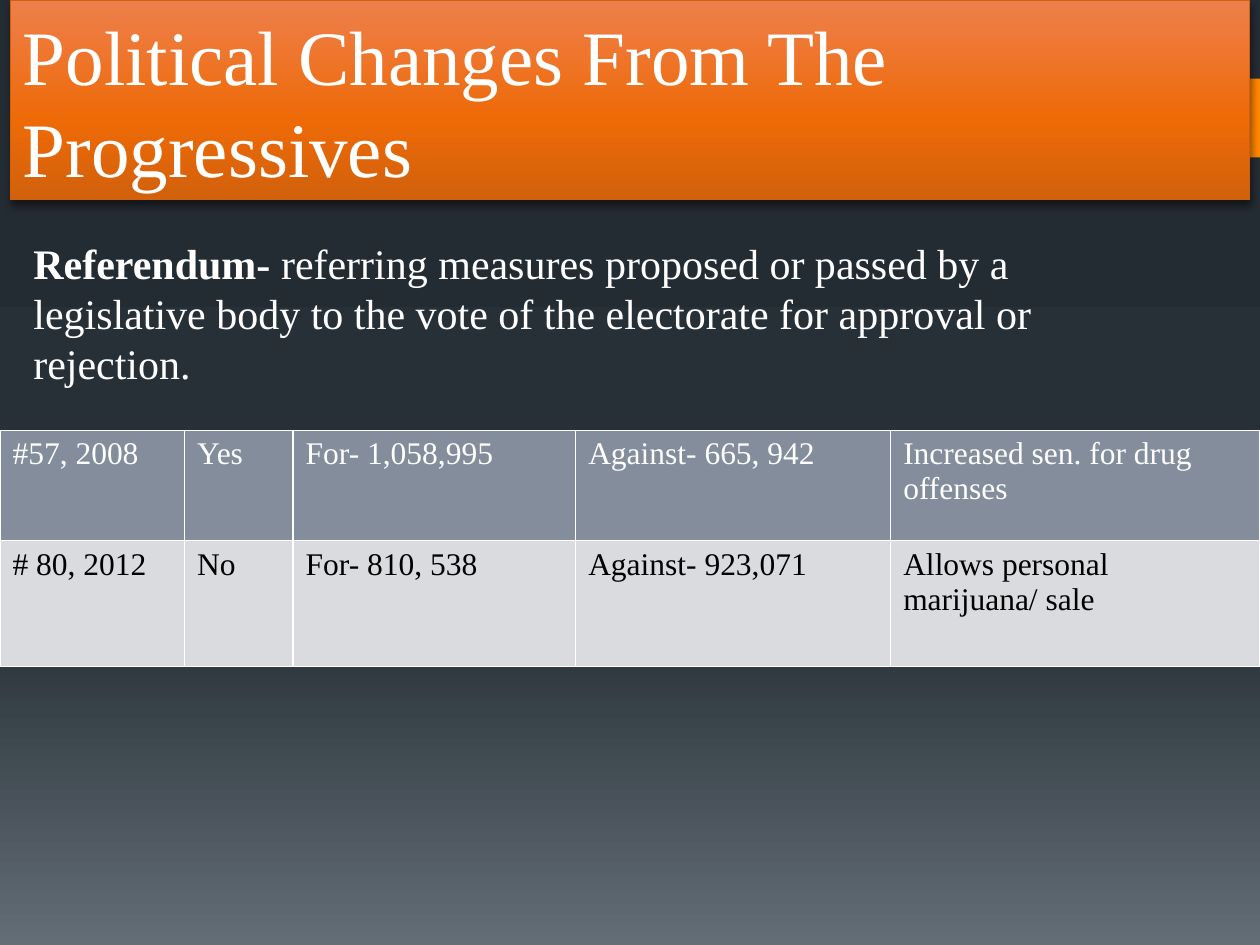
import copy
from dataclasses import dataclass

import pptx
import pptx.dml.color
import pptx.enum.shapes
import pptx.enum.text
import pptx.oxml
import pptx.oxml.ns
import pptx.util
from lxml import etree

Pt = pptx.util.Pt
RGBColor = pptx.dml.color.RGBColor
qn = pptx.oxml.ns.qn

WHITE = RGBColor(0xFF, 0xFF, 0xFF)
BLACK = RGBColor(0x00, 0x00, 0x00)
AMBER = RGBColor(0xFF, 0x86, 0x00)
RUST = RGBColor(0xD2, 0x61, 0x0C)
SLATE = RGBColor(0x83, 0x8D, 0x9B)
PALE_GREY = RGBColor(0xD9, 0xDB, 0xDE)
BACKGROUND_STOPS = (
    (0, RGBColor(0x24, 0x2C, 0x33)),
    (0.65, RGBColor(0x27, 0x30, 0x37)),
    (1, RGBColor(0x63, 0x6D, 0x76)),
)
TITLE_STOPS = (
    (0, RGBColor(0xEE, 0x7F, 0x4C)),
    (0.6, RGBColor(0xEE, 0x6A, 0x07)),
    (1, RUST),
)
FONT = "Times New Roman"


@dataclass(frozen=True)
class Frame:
    left: float
    top: float
    width: float
    height: float

    def lengths(self) -> tuple:
        return Pt(self.left), Pt(self.top), Pt(self.width), Pt(self.height)


@dataclass(frozen=True)
class VoteRow:
    cells: tuple
    height: float
    fill: RGBColor
    text: RGBColor


ACCENT_BARS = (Frame(664, 45, 6.5, 45), Frame(674.5, 45, 45.5, 45))
TITLE_FRAME = Frame(6, 0, 708, 114)
DEFINITION_FRAME = Frame(12, 132, 588, 94)
COLUMN_WIDTHS = (105.5, 62, 161.5, 180, 211)
VOTES = (
    VoteRow(
        ("#57, 2008", "Yes", "For- 1,058,995", "Against- 665, 942",
         "Increased sen. for drug offenses"),
        63, SLATE, WHITE,
    ),
    VoteRow(
        ("# 80, 2012", "No", "For- 810, 538", "Against- 923,071",
         "Allows personal marijuana/ sale"),
        72, PALE_GREY, BLACK,
    ),
)


def fill_downward(fill, element, stops: tuple) -> None:
    """Fill with a three-stop gradient that runs from top to bottom."""
    fill.gradient()
    fill.gradient_angle = 270
    stop_list = next(element.iter(qn("a:gsLst")))
    stop_list.insert(1, copy.deepcopy(stop_list[0]))
    for stop, (position, color) in zip(fill.gradient_stops, stops):
        stop.position = position
        stop.color.rgb = color


def set_font(para, size: float, color: RGBColor) -> None:
    para.font.name = FONT
    para.font.size = Pt(size)
    para.font.color.rgb = color


def add_rectangle(page, frame: Frame):
    box = page.shapes.add_shape(
        pptx.enum.shapes.MSO_SHAPE.RECTANGLE, *frame.lengths())
    box.shadow.inherit = False
    return box


def add_accent_bar(page, frame: Frame) -> None:
    bar = add_rectangle(page, frame)
    bar.fill.solid()
    bar.fill.fore_color.rgb = AMBER
    bar.line.fill.background()


def add_drop_shadow(box) -> None:
    effects = box.element.spPr.find(qn("a:effectLst"))
    shadow = etree.SubElement(
        effects, qn("a:outerShdw"), blurRad=str(Pt(3.8)), dist=str(Pt(3)),
        dir="5400000", rotWithShape="0")
    color = etree.SubElement(shadow, qn("a:srgbClr"), val=str(BLACK))
    etree.SubElement(color, qn("a:alpha"), val="48000")


def add_title(page) -> None:
    box = add_rectangle(page, TITLE_FRAME)
    fill_downward(box.fill, box.element, TITLE_STOPS)
    box.line.color.rgb = RUST
    box.line.width = Pt(1)
    add_drop_shadow(box)
    frame = box.text_frame
    frame.word_wrap = True
    frame.vertical_anchor = pptx.enum.text.MSO_ANCHOR.BOTTOM
    para = frame.paragraphs[0]
    para.text = "Political Changes From The Progressives"
    para.alignment = pptx.enum.text.PP_ALIGN.LEFT
    set_font(para, 44, WHITE)


def add_definition(page) -> None:
    frame = page.shapes.add_textbox(*DEFINITION_FRAME.lengths()).text_frame
    frame.word_wrap = True
    frame.auto_size = pptx.enum.text.MSO_AUTO_SIZE.SHAPE_TO_FIT_TEXT
    para = frame.paragraphs[0]
    set_font(para, 24, WHITE)
    term = para.add_run()
    term.text = "Referendum-"
    term.font.bold = True
    para.add_run().text = (
        " referring measures proposed or passed by a legislative body "
        "to the vote of the electorate for approval or rejection.")


def set_borders(cell) -> None:
    properties = cell._tc.get_or_add_tcPr()
    for index, side in enumerate(("lnL", "lnR", "lnT", "lnB")):
        line = etree.Element(qn(f"a:{side}"), w=str(Pt(1)))
        fill = etree.SubElement(line, qn("a:solidFill"))
        etree.SubElement(fill, qn("a:srgbClr"), val=str(WHITE))
        properties.insert(index, line)


def add_vote_table(page) -> None:
    frame = Frame(0, 246, sum(COLUMN_WIDTHS), sum(vote.height for vote in VOTES))
    table = page.shapes.add_table(
        len(VOTES), len(COLUMN_WIDTHS), *frame.lengths()).table
    for column, width in zip(table.columns, COLUMN_WIDTHS):
        column.width = Pt(width)
    for row, vote in zip(table.rows, VOTES):
        row.height = Pt(vote.height)
        for cell, text in zip(row.cells, vote.cells):
            cell.fill.solid()
            cell.fill.fore_color.rgb = vote.fill
            set_borders(cell)
            para = cell.text_frame.paragraphs[0]
            para.text = text
            set_font(para, 18, vote.text)
            para.font.bold = False


def main() -> None:
    deck = pptx.Presentation()
    deck.slide_width, deck.slide_height = Pt(720), Pt(540)
    page = deck.slides.add_slide(deck.slide_layouts[6])
    fill_downward(page.background.fill, page.element, BACKGROUND_STOPS)
    for frame in ACCENT_BARS:
        add_accent_bar(page, frame)
    add_title(page)
    add_definition(page)
    add_vote_table(page)
    deck.save("out.pptx")


if __name__ == "__main__":
    main()
